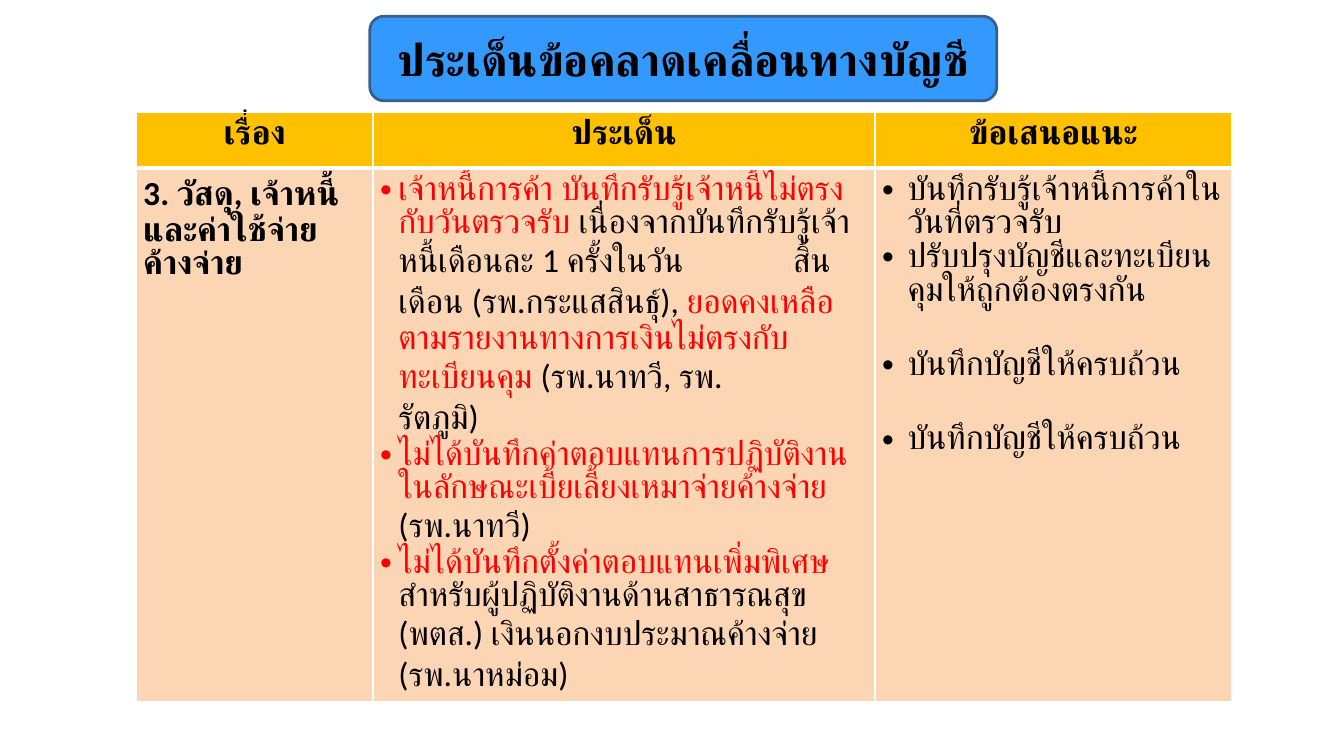
from lxml.etree import SubElement
from pptx import Presentation
from pptx.dml.color import RGBColor
from pptx.enum.shapes import MSO_SHAPE
from pptx.enum.text import MSO_ANCHOR, PP_ALIGN
from pptx.oxml.ns import qn
from pptx.util import Cm, Pt

BLACK, RED, WHITE = "000000", "FF0000", "FFFFFF"
AMBER, PEACH = "FFC000", "FCD5B5"
HEADINGS = ["เรื่อง", "ประเด็น", "ข้อเสนอแนะ"]
TOPIC = "3. วัสดุ, เจ้าหนี้และค่าใช้จ่ายค้างจ่าย"
ISSUES = [
    [
        ("เจ้าหนี้การค้า บันทึกรับรู้เจ้าหนี้ไม่ตรงกับวันตรวจรับ ", RED),
        ("เนื่องจากบันทึกรับรู้เจ้าหนี้เดือนละ 1 ครั้งในวัน\tสิ้นเดือน (รพ.กระแสสินธุ์), ", BLACK),
        ("ยอดคงเหลือตามรายงานทางการเงินไม่ตรงกับทะเบียนคุม", RED),
        (" (รพ.นาทวี, รพ.\nรัตภูมิ)", BLACK),
    ],
    [
        ("ไม่ได้บันทึกค่าตอบแทนการปฏิบัติงานในลักษณะเบี้ยเลี้ยงเหมาจ่ายค้างจ่าย ", RED),
        ("(รพ.นาทวี)", BLACK),
    ],
    [
        ("ไม่ได้บันทึกตั้งค่าตอบแทนเพิ่มพิเศษ", RED),
        ("สำหรับผู้ปฏิบัติงานด้านสาธารณสุข (พตส.) เงินนอกงบประมาณค้างจ่าย (รพ.นาหม่อม)", BLACK),
    ],
]
ADVICE = [
    ("บันทึกรับรู้เจ้าหนี้การค้าในวันที่ตรวจรับ", 0),
    ("ปรับปรุงบัญชีและทะเบียนคุมให้ถูกต้องตรงกัน", 0),
    ("บันทึกบัญชีให้ครบถ้วน", 29),
    ("บันทึกบัญชีให้ครบถ้วน", 29),
]


def color(value):
    return RGBColor.from_string(value)


def add_text(paragraph, text, size=24, fill=BLACK, bold=False, align=PP_ALIGN.LEFT):
    paragraph.alignment = align
    for index, line in enumerate(text.split("\n")):
        if index:
            paragraph.add_line_break()
        run = paragraph.add_run()
        run.text = line
        run.font.name = "Calibri"
        run.font.size = Pt(size)
        run.font.bold = bold
        run.font.color.rgb = color(fill)


def add_bullet(paragraph, indent, gap=0, tab=None):
    paragraph.space_before = Pt(gap)
    properties = paragraph._p.get_or_add_pPr()
    properties.set("marL", str(indent))
    properties.set("indent", str(-indent))
    SubElement(properties, qn("a:buFont"), typeface="Arial")
    SubElement(properties, qn("a:buChar"), char="•")
    if tab:
        stops = SubElement(properties, qn("a:tabLst"))
        SubElement(stops, qn("a:tab"), pos=str(tab), algn="l")


def paragraphs(frame, count):
    return [frame.paragraphs[0]] + [frame.add_paragraph() for _ in range(count - 1)]


def style_cell(cell, fill, bottom, top):
    cell.margin_left = cell.margin_right = Cm(0.18)
    cell.margin_top = cell.margin_bottom = Cm(0.13)
    cell.vertical_anchor = MSO_ANCHOR.TOP
    properties = cell._tc.get_or_add_tcPr()
    for side, width in (("L", 1), ("R", 1), ("T", top), ("B", bottom)):
        border = SubElement(properties, qn(f"a:ln{side}"), w=str(Pt(width)))
        solid = SubElement(border, qn("a:solidFill"))
        SubElement(solid, qn("a:srgbClr"), val=WHITE)
    cell.fill.solid()
    cell.fill.fore_color.rgb = color(fill)


def add_title(slide, text):
    banner = slide.shapes.add_shape(
        MSO_SHAPE.FLOWCHART_ALTERNATE_PROCESS, Cm(9.32), Cm(0.41), Cm(15.8), Cm(2.13))
    banner.shadow.inherit = False
    banner.fill.solid()
    banner.fill.fore_color.rgb = color("3399FF")
    banner.line.color.rgb = color("3A5F8C")
    banner.line.width = Pt(2)
    banner.text_frame.word_wrap = True
    banner.text_frame.vertical_anchor = MSO_ANCHOR.MIDDLE
    add_text(banner.text_frame.paragraphs[0], text, size=32, bold=True, align=PP_ALIGN.CENTER)


def add_findings(slide):
    widths, heights = [5.97, 12.65, 8.99], [1.4, 13.43]
    findings = slide.shapes.add_table(
        2, 3, Cm(3.43), Cm(2.84), Cm(sum(widths)), Cm(sum(heights))).table
    for column, width in zip(findings.columns, widths):
        column.width = Cm(width)
    for row, height in zip(findings.rows, heights):
        row.height = Cm(height)
    for column, heading in enumerate(HEADINGS):
        header, body = findings.cell(0, column), findings.cell(1, column)
        style_cell(header, AMBER, bottom=3, top=1)
        style_cell(body, PEACH, bottom=1, top=3)
        add_text(header.text_frame.paragraphs[0], heading, bold=True, align=PP_ALIGN.CENTER)

    topic, issues, advice = (findings.cell(1, column).text_frame for column in range(3))
    add_text(topic.paragraphs[0], TOPIC, bold=True)
    for paragraph, parts in zip(paragraphs(issues, len(ISSUES)), ISSUES):
        has_tab = any("\t" in text for text, _ in parts)
        add_bullet(paragraph, Cm(0.46), tab=Cm(10.4) if has_tab else None)
        for text, fill in parts:
            add_text(paragraph, text, fill=fill)
    for paragraph, (text, gap) in zip(paragraphs(advice, len(ADVICE)), ADVICE):
        add_bullet(paragraph, Cm(0.64), gap=gap)
        add_text(paragraph, text)


def main():
    presentation = Presentation()
    presentation.slide_width, presentation.slide_height = Cm(33.87), Cm(19.05)
    slide = presentation.slides.add_slide(presentation.slide_layouts[6])
    add_findings(slide)
    add_title(slide, "ประเด็นข้อคลาดเคลื่อนทางบัญชี")
    presentation.save("out.pptx")


if __name__ == "__main__":
    main()
